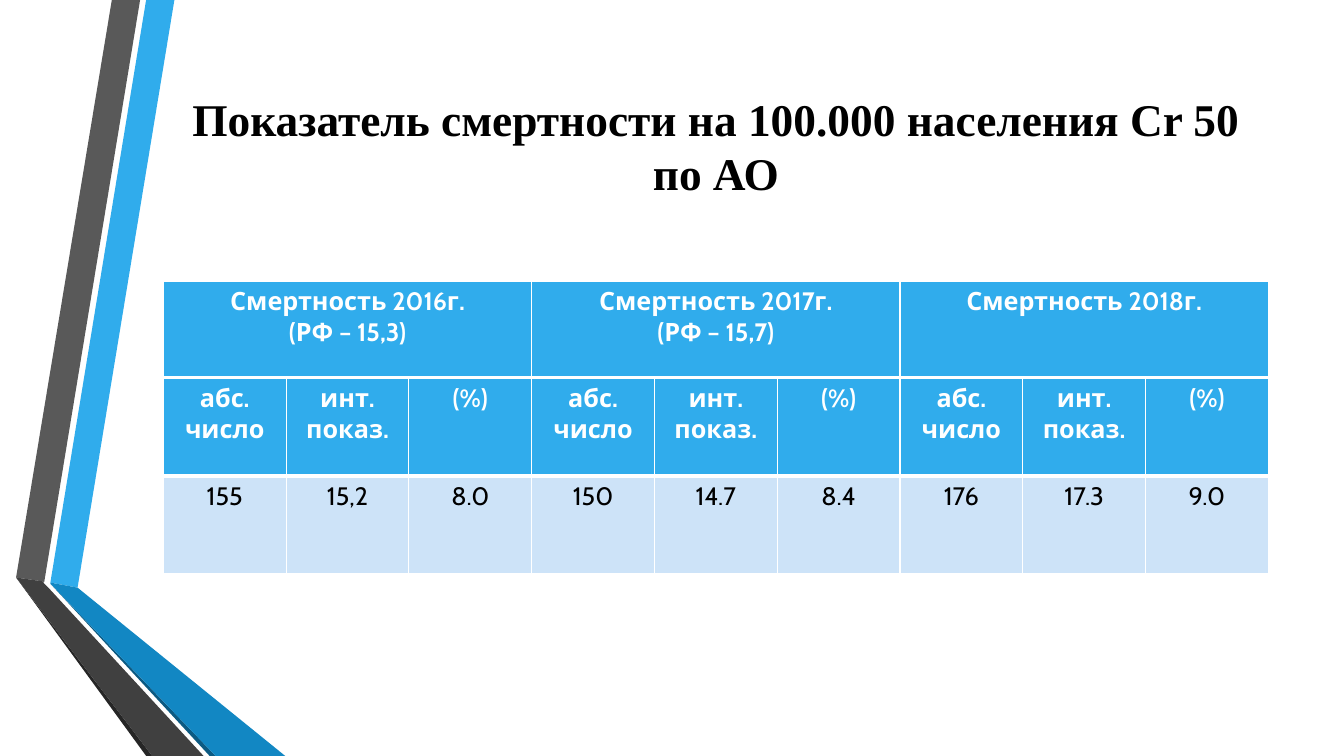
from dataclasses import dataclass
from pptx import Presentation, util as u
from pptx.dml.color import RGBColor
from pptx.enum import text
from pptx.oxml import parse_xml
from pptx.oxml.ns import nsdecls


@dataclass
class Theme:
    ink: str = "000000"
    white: str = "FFFFFF"
    blue: str = "30ACEC"
    pale: str = "CDE3F8"
    serif: str = "Times New Roman"
    sans: str = "Cabin"
    head: float = 32.4
    body: float = 18


look = Theme()
deck = Presentation()
deck.slide_width, deck.slide_height = u.Inches(13.33), u.Inches(7.5)
page = deck.slides.add_slide(deck.slide_layouts[5])
left, wide = 1.62, 10.96


def style(para, face, size, tint, bold):
    para.alignment = text.PP_ALIGN.CENTER
    for run in para.runs:
        font = run.font
        font.name, font.size, font.bold = face, u.Pt(size), bold
        font.color.rgb = RGBColor.from_string(tint)


def add_grid(top, high, rows):
    """Each row is (labels, fill, ink, bold, bottom line width)."""
    cols = len(rows[0][0])
    grid = page.shapes.add_table(
        len(rows), cols, u.Inches(left), u.Inches(top),
        u.Inches(wide), u.Inches(high * len(rows))).table
    grid.first_row = grid.horz_banding = False
    for row, (labels, fill, ink, bold, base) in enumerate(rows):
        grid.rows[row].height = u.Inches(high)
        for col, label in enumerate(labels):
            cell = grid.cell(row, col)
            cell.text_frame.text = label
            for para in cell.text_frame.paragraphs:
                style(para, look.sans, look.body, ink, bold)
            # Cell borders come before the fill
            top_line = rows[row - 1][4] if row else 1
            for side, thick in zip("LRTB", (1, 1, top_line, base)):
                cell._tc.get_or_add_tcPr().append(parse_xml(
                    f'<a:ln{side} {nsdecls("a")} w="{u.Pt(thick)}"><a:solidFill>'
                    f'<a:srgbClr val="{look.white}"/></a:solidFill></a:ln{side}>'))
            cell.fill.solid()
            cell.fill.fore_color.rgb = RGBColor.from_string(fill)


# Folded ribbons at the left edge, in hundredths of an inch
ribbons = [
    (look.blue, [(50, 578), (77, 583), (173, 0), (145, 0)]),
    ("595959", [(139, 0), (111, 0), (16, 573), (44, 577)]),
    ("262626", [(16, 573), (145, 750), (151, 750)]),
    ("0C5A82", [(50, 579), (208, 750), (214, 750)]),
    ("1287C3", [(50, 579), (214, 750), (283, 750), (77, 583), (50, 578)]),
    ("404040", [(202, 750), (48, 583), (43, 578), (44, 577), (16, 573),
                (151, 750)]),
]
for tint, spots in ribbons:
    pen = page.shapes.build_freeform(*spots[0], scale=u.Inches(0.01))
    pen.add_line_segments(spots[1:], close=True)
    band = pen.convert_to_shape()
    band.shadow.inherit = False
    band.fill.solid()
    band.fill.fore_color.rgb = RGBColor.from_string(tint)
    band.line.fill.background()

# Title, lifted by a deeper bottom inset
title = page.shapes.title
title.left, title.top = u.Inches(left), u.Inches(0.75)
title.width, title.height = u.Inches(wide), u.Inches(1.92)
frame = title.text_frame
frame.text = "Показатель смертности на 100.000 населения Cr 50 по АО"
frame.word_wrap = True
frame.auto_size = text.MSO_AUTO_SIZE.NONE
frame.vertical_anchor = text.MSO_ANCHOR.MIDDLE
frame.margin_bottom = u.Inches(0.59)
style(frame.paragraphs[0], look.serif, look.head, look.ink, True)

# Years above, measures and values below
years = ["Смертность 2016г.\n(РФ – 15,3)", "Смертность 2017г.\n(РФ – 15,7)",
         "Смертность 2018г."]
kinds = ["абс.\nчисло", "инт.\nпоказ.", "(%)"]
rates = ["155", "15,2", "8.0", "150", "14.7", "8.4", "176", "17.3", "9.0"]
add_grid(2.79, 0.96, [(years, look.blue, look.white, True, 3)])
add_grid(3.75, 0.97, [
    (kinds * len(years), look.blue, look.white, True, 3),
    (rates, look.pale, look.ink, False, 1)])

deck.save("out.pptx")
